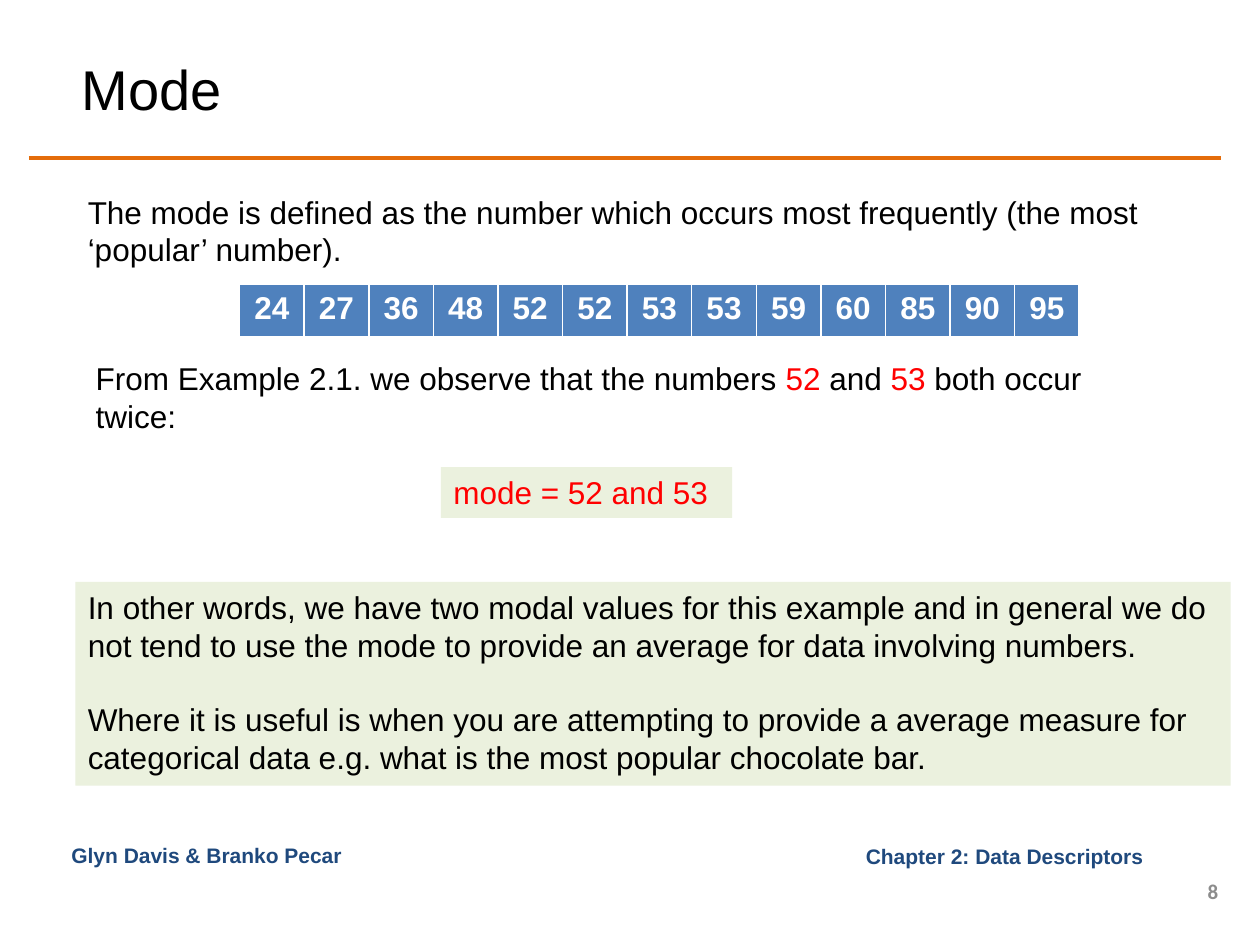
"""Build the slide on the mode of a data set."""
import pptx
import pptx.dml.color
import pptx.enum.shapes
import pptx.enum.text
import pptx.util
from lxml import etree

Cm, Pt = pptx.util.Cm, pptx.util.Pt
RGB = pptx.dml.color.RGBColor
ALIGN = pptx.enum.text.PP_ALIGN
ANCHOR = pptx.enum.text.MSO_ANCHOR

BLACK = RGB(0x00, 0x00, 0x00)
WHITE = RGB(0xFF, 0xFF, 0xFF)
RED = RGB(0xFF, 0x00, 0x00)
NAVY = RGB(0x1F, 0x49, 0x7D)
GREY = RGB(0x8C, 0x8C, 0x8C)
ORANGE = RGB(0xE4, 0x6C, 0x0A)
BLUE = RGB(0x4F, 0x81, 0xBD)
PALE_GREEN = RGB(0xEB, 0xF1, 0xDE)

NUMBERS = [24, 27, 36, 48, 52, 52, 53, 53, 59, 60, 85, 90, 95]
TABLE = (4.83, 5.74, 16.93, 1.04)
RULE = (0.58, 3.18, 24.61, 3.18)

FOOTER = dict(size=12, color=NAVY, bold=True)
BOXES = [
    ((13.89, 16.87, 9.53, 0.79), ["Chapter 2: Data Descriptors "],
     dict(FOOTER, align=ALIGN.RIGHT, anchor=ANCHOR.MIDDLE)),
    ((1.4, 0.79, 19.25, 1.98), ["Mode"], dict(size=32, anchor=ANCHOR.MIDDLE)),
    ((23.62, 17.65, 1.19, 0.61), ["8"],
     dict(size=12, color=GREY, bold=True, font="Calibri",
          align=ALIGN.RIGHT, anchor=ANCHOR.MIDDLE)),
    ((1.19, 16.87, 7.54, 0.79), ["Glyn Davis & Branko Pecar"], FOOTER),
    ((1.68, 7.11, 22.02, 1.8),
     [["From Example 2.1. we observe that the numbers ", ("52", RED), " and ",
       ("53", RED), " both occur twice:"]], {}),
    ((8.89, 9.42, 5.87, 1.02), ["mode = 52 and 53"],
     dict(color=RED, fill=PALE_GREEN)),
    ((1.52, 11.73, 23.29, 4.11),
     ["In other words, we have two modal values for this example and in general "
      "we do not tend to use the mode to provide an average for data involving "
      "numbers.",
      "Where it is useful is when you are attempting to provide a average measure "
      "for categorical data e.g. what is the most popular chocolate bar."],
     dict(fill=PALE_GREEN, gap=20.7)),
    ((1.52, 3.76, 23.19, 1.8),
     ["The mode is defined as the number which occurs most frequently "
      "(the most ‘popular’ number)."], {}),
]


def write(tf, paragraphs, size=18, color=BLACK, bold=False, font="Arial",
          align=ALIGN.LEFT, gap=0):
    for i, runs in enumerate(paragraphs):
        p = tf.add_paragraph() if i else tf.paragraphs[0]
        p.alignment = align
        p.space_before = Pt(gap if i else 0)
        for run in [runs] if isinstance(runs, str) else runs:
            text, tint = (run, color) if isinstance(run, str) else run
            r = p.add_run()
            r.text = text
            r.font.name, r.font.size, r.font.bold = font, Pt(size), bold
            r.font.color.rgb = tint


def add_box(s, at, paragraphs, fill=None, anchor=ANCHOR.TOP, **fmt):
    place = [Cm(v) for v in at]
    if fill is None:
        sp = s.shapes.add_textbox(*place)
    else:
        sp = s.shapes.add_shape(pptx.enum.shapes.MSO_SHAPE.RECTANGLE, *place)
        sp.shadow.inherit = False
        sp.fill.solid()
        sp.fill.fore_color.rgb = fill
        sp.line.fill.background()
    tf = sp.text_frame
    tf.word_wrap = True
    tf.vertical_anchor = anchor
    write(tf, paragraphs, **fmt)


def add_rule(s):
    line = s.shapes.add_connector(pptx.enum.shapes.MSO_CONNECTOR.STRAIGHT,
                                  *[Cm(v) for v in RULE])
    line.line.color.rgb = ORANGE
    line.line.width = Pt(2)
    etree.SubElement(line._element.spPr, pptx.oxml.ns.qn("a:effectLst"))


def add_numbers(s):
    table = s.shapes.add_table(1, len(NUMBERS), *[Cm(v) for v in TABLE]).table
    for cell, number in zip(table.rows[0].cells, NUMBERS):
        cell.fill.solid()
        cell.fill.fore_color.rgb = BLUE
        write(cell.text_frame, [str(number)], color=WHITE, bold=True,
              align=ALIGN.CENTER)


def main():
    prs = pptx.Presentation()
    prs.slide_width, prs.slide_height = Cm(25.4), Cm(19.05)
    s = prs.slides.add_slide(prs.slide_layouts[6])
    add_rule(s)
    for at, paragraphs, fmt in BOXES:
        add_box(s, at, paragraphs, **fmt)
    add_numbers(s)
    prs.save("out.pptx")


if __name__ == "__main__":
    main()
